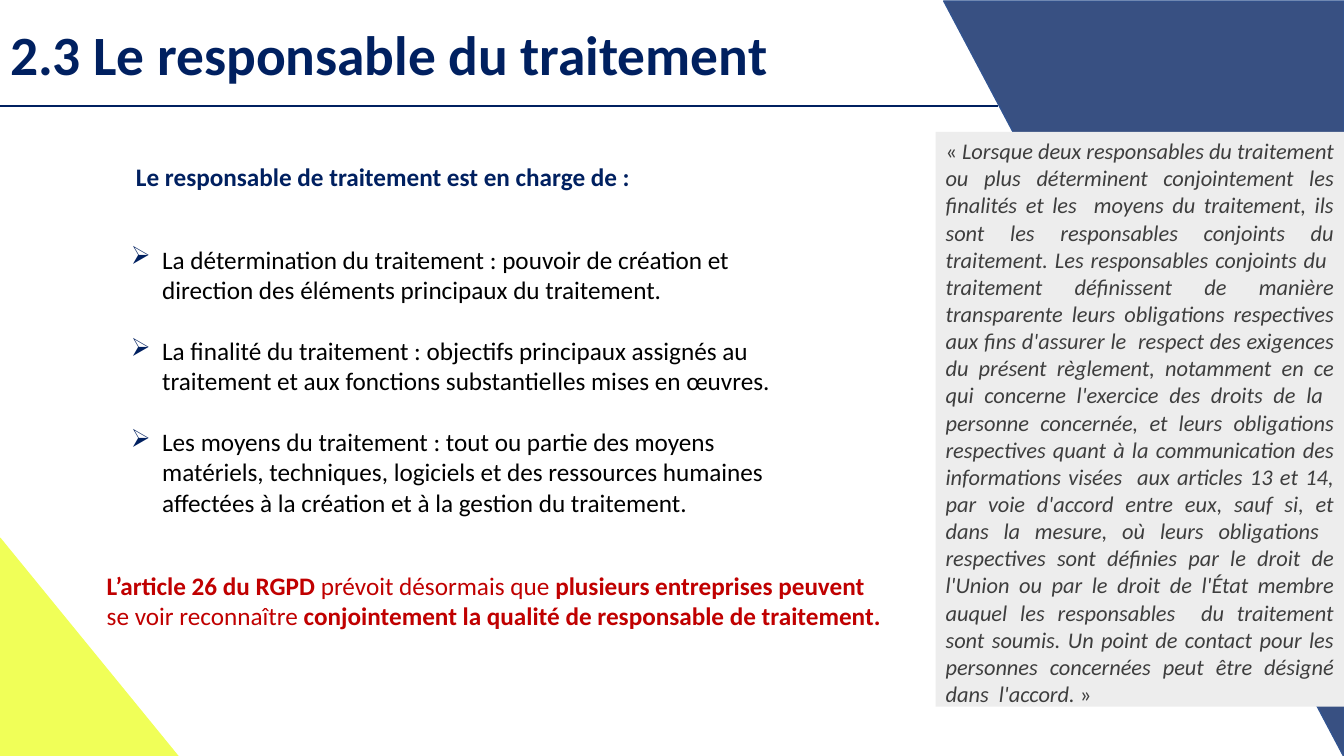
from lxml import etree
from pptx import Presentation
from pptx import util as u
from pptx.dml.color import RGBColor
from pptx.enum import shapes, text
from pptx.oxml import ns

PX = 9144  # EMU per px, 100 px to the inch
COLORS = {"navy": "002060", "edge": "325491", "lime": "F0FF58", "red": "C00000",
          "black": "000000", "grey": "3E3E3E", "panel": "EDEDED"}
DUTIES = [
    "La détermination du traitement : pouvoir de création et direction des éléments "
    "principaux du traitement.",
    "La finalité du traitement : objectifs principaux assignés au traitement et aux "
    "fonctions substantielles mises en œuvres.",
    "Les moyens du traitement : tout ou partie des moyens matériels, techniques, logiciels "
    "et des ressources humaines affectées à la création et à la gestion du traitement.",
]
ARTICLE_26 = [
    ("L’article 26 du RGPD ", "b"),
    ("prévoit désormais que", ""),
    (" plusieurs entreprises peuvent ", "b"),
    ("se voir reconnaître ", ""),
    ("conjointement la qualité de responsable de traitement.", "b"),
]
QUOTE = [
    ("« ", ""),
    ("Lorsque deux responsables du traitement ou plus déterminent conjointement les finalités "
     "et les  moyens du traitement, ils sont les responsables conjoints du traitement. ", "i"),
    ("Les responsables conjoints du  traitement définissent de manière transparente leurs "
     "obligations respectives aux fins d'assurer le  respect des exigences du présent "
     "règlement, notamment en ce qui concerne l'exercice des droits de la  personne "
     "concernée, et leurs obligations respectives quant à la communication des informations "
     "visées  aux articles 13 et 14, ", "i"),
    ("par voie d'accord entre eux, sauf si, et dans la mesure, où leurs obligations  "
     "respectives sont définies par le droit de l'Union ou par le droit de l'État membre "
     "auquel les responsables  du traitement sont soumis. ", "i"),
    ("Un point de contact pour les personnes concernées peut être désigné dans  l'accord. ",
     "i"),
    ("»", ""),
]


def rgb(name):
    return RGBColor.from_string(COLORS[name])


def child(parent, tag, **attrs):
    return etree.SubElement(parent, ns.qn(tag), **attrs)


def add_bullet(p, char, color, indent):
    pPr = p._p.get_or_add_pPr()
    pPr.set("marL", str(indent * PX))
    pPr.set("indent", str(-indent * PX))
    child(child(pPr, "a:buClr"), "a:srgbClr", val=COLORS[color])
    child(pPr, "a:buChar", char=char)


def write(tf, paragraphs, size=18, color="black", align="LEFT", anchor="TOP",
          line=None, after=0, bullet=None):
    """Fill a frame; each paragraph is a list of (words, style), style holding b and/or i."""
    tf.word_wrap = True
    tf.auto_size = text.MSO_AUTO_SIZE.NONE
    tf.vertical_anchor = getattr(text.MSO_ANCHOR, anchor)
    for n, runs in enumerate(paragraphs):
        p = tf.add_paragraph() if n else tf.paragraphs[0]
        p.alignment = getattr(text.PP_ALIGN, align)
        p.space_before, p.space_after = u.Pt(0), u.Pt(after)
        if line:
            p.line_spacing = line
        if bullet:
            add_bullet(p, bullet, "navy", indent=31)
        for words, style in runs:
            r = p.add_run()
            r.text = words
            r.font.name, r.font.size = "Calibri", u.Pt(size)
            r.font.bold, r.font.italic = "b" in style, "i" in style
            r.font.color.rgb = rgb(color)


class Deck:
    def __init__(self, width, height):
        self.prs = Presentation()
        self.prs.slide_width, self.prs.slide_height = width * PX, height * PX
        self.s = None

    def title_slide(self, words, box, **fmt):
        self.s = self.prs.slides.add_slide(self.prs.slide_layouts[5])
        sp = self.s.shapes.title
        sp.left, sp.top, sp.width, sp.height = (v * PX for v in box)
        write(sp.text_frame, [[(words, "b")]], **fmt)

    def text_box(self, paragraphs, box, **fmt):
        sp = self.s.shapes.add_textbox(*(v * PX for v in box))
        write(sp.text_frame, paragraphs, **fmt)

    def shape(self, kind, box, fill, edge=None, alpha=None, rotation=0):
        sp = self.s.shapes.add_shape(getattr(shapes.MSO_SHAPE, kind), *(v * PX for v in box))
        sp.shadow.inherit = False
        sp.rotation = rotation
        sp.fill.solid()
        sp.fill.fore_color.rgb = rgb(fill)
        if alpha:
            clr = sp._element.spPr.find(ns.qn("a:solidFill"))[0]
            child(clr, "a:alpha", val=str(alpha * 1000))
        if edge:
            sp.line.color.rgb = rgb(edge)
            sp.line.width = u.Pt(1)
        else:
            sp.line.fill.background()
        return sp

    def rule(self, x1, y1, x2, y2, color):
        c = self.s.shapes.add_connector(shapes.MSO_CONNECTOR.STRAIGHT,
                                        *(v * PX for v in (x1, y1, x2, y2)))
        c.line.color.rgb = rgb(color)
        c.line.width = u.Pt(1)
        child(c._element.spPr, "a:effectLst")


def main():
    d = Deck(1333, 750)
    d.title_slide("2.3 Le responsable du traitement", (0, 21, 1150, 73),
                  size=39.6, color="navy", anchor="MIDDLE", line=0.9)
    d.rule(0, 105, 990, 105, "navy")
    d.shape("RIGHT_TRIANGLE", (0, 534, 182, 223), "lime", edge="lime")
    d.shape("RIGHT_TRIANGLE", (936, 1, 397, 750), "navy", edge="edge", alpha=78, rotation=180)
    d.text_box([[("Le responsable de traitement est en charge de :", "b")]],
               (125, 155, 722, 40), color="navy")
    d.text_box([[(duty, "")] for duty in DUTIES], (120, 237, 679, 283), after=22, bullet="➢")
    d.text_box([ARTICLE_26], (96, 561, 792, 71), color="red")
    panel = d.shape("RECTANGLE", (928, 131, 405, 570), "panel")
    write(panel.text_frame, [QUOTE], size=16, color="grey", align="JUSTIFY",
          line=u.Pt(19.4))
    d.prs.save("out.pptx")


if __name__ == "__main__":
    main()
